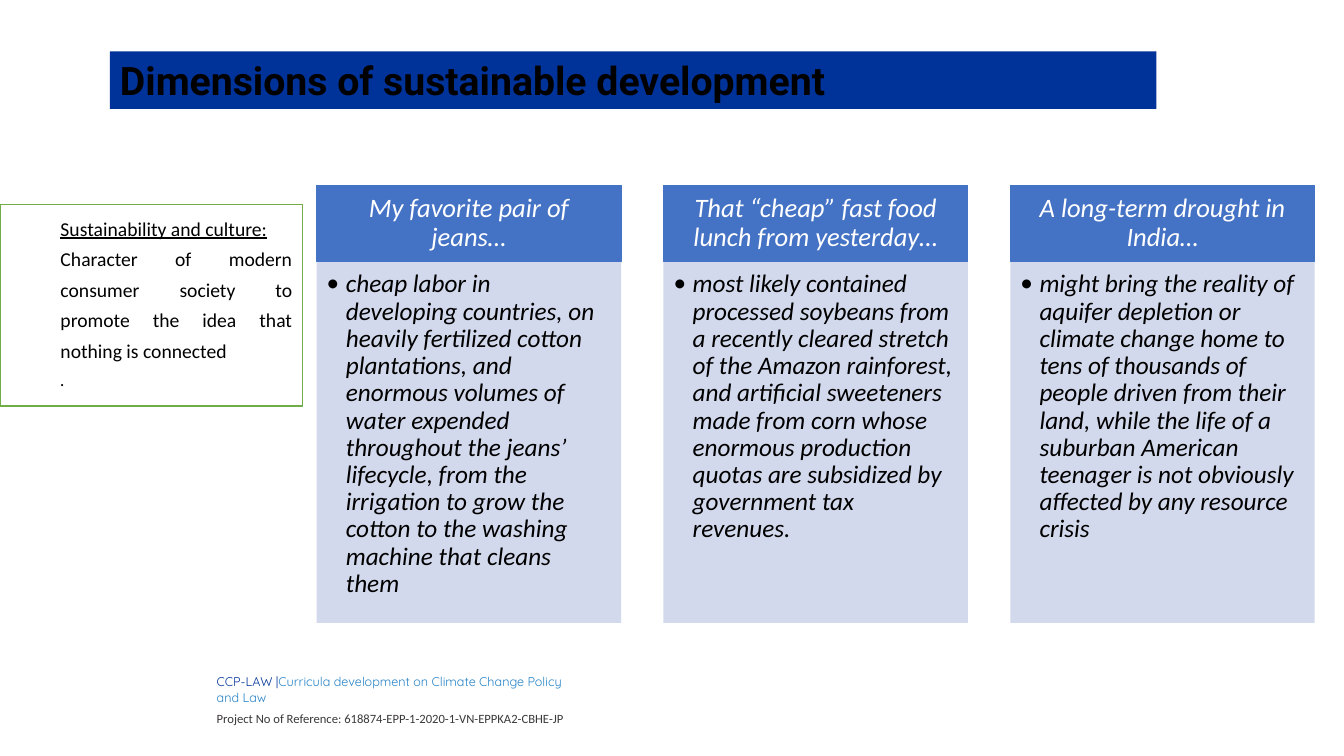
from dataclasses import dataclass

from lxml import etree
from pptx import Presentation
from pptx.dml.color import RGBColor
from pptx.enum.shapes import MSO_SHAPE
from pptx.enum.text import MSO_ANCHOR, MSO_AUTO_SIZE, PP_ALIGN
from pptx.oxml.ns import qn
from pptx.util import Inches, Pt

RECTANGLE = MSO_SHAPE.RECTANGLE
LEFT, CENTER, JUSTIFY = PP_ALIGN.LEFT, PP_ALIGN.CENTER, PP_ALIGN.JUSTIFY
TOP, MIDDLE = MSO_ANCHOR.TOP, MSO_ANCHOR.MIDDLE
NO_AUTOFIT = MSO_AUTO_SIZE.NONE
COMPARISON_LAYOUT = 4
CULTURE_PLACEHOLDER = 3


@dataclass(frozen=True)
class Theme:
    heading_font: str = "Roboto"
    body_font: str = "Calibri"
    footer_font: str = "Quicksand"
    navy: str = "003399"
    blue: str = "4472C4"
    pale_blue: str = "CFD5EA"
    sky: str = "2683C6"
    green: str = "70AD47"
    gray: str = "3B3838"
    black: str = "000000"
    white: str = "FFFFFF"
    title_size: float = 28
    header_size: float = 19
    list_size: float = 18
    culture_size: float = 14
    mark_size: float = 12.6
    footer_size: float = 9


THEME = Theme()


@dataclass(frozen=True)
class Box:
    left: float
    top: float
    width: float
    height: float

    def lengths(self) -> tuple:
        return tuple(Inches(value) for value in (self.left, self.top, self.width, self.height))


@dataclass(frozen=True)
class Run:
    text: str
    size: float
    color: str = THEME.black
    font: str = THEME.body_font
    bold: bool = False
    italic: bool = False
    underline: bool = False


@dataclass(frozen=True)
class Example:
    placeholder: int
    header: str
    detail: str


EXAMPLES = (
    Example(1, "My favorite pair of jeans…",
            "cheap labor in developing countries, on heavily fertilized cotton plantations, "
            "and enormous volumes of water expended throughout the jeans’ lifecycle, from the "
            "irrigation to grow the cotton to the washing machine that cleans them"),
    Example(2, "That “cheap” fast food lunch from yesterday…",
            "most likely contained processed soybeans from a recently cleared stretch of the "
            "Amazon rainforest, and artificial sweeteners made from corn whose enormous "
            "production quotas are subsidized by government tax revenues."),
    Example(4, "A long-term drought in India…",
            "might bring the reality of aquifer depletion or climate change home to tens of "
            "thousands of people driven from their land, while the life of a suburban American "
            "teenager is not obviously affected by any resource crisis"),
)
CULTURE_LINES = (
    (Run("Sustainability and culture:", THEME.culture_size, underline=True),),
    (Run("Character of modern consumer society to promote the idea that nothing is connected",
         THEME.culture_size),),
    (Run(".", THEME.mark_size, italic=True),),
)
FOOTER_LINES = (
    (Run("CCP-LAW |", THEME.footer_size, THEME.navy, THEME.footer_font),
     Run("Curricula development on Climate Change Policy and Law", THEME.footer_size,
         THEME.sky, THEME.footer_font)),
    (Run("Project No of Reference: 618874-EPP-1-2020-1-VN-EPPKA2-CBHE-JP",
         THEME.footer_size, THEME.gray),),
)
COLUMN_LEFT, COLUMN_STEP, COLUMN_WIDTH = 3.14, 3.44, 3.02
HEADER_TOP, HEADER_HEIGHT, LIST_HEIGHT = 1.84, 0.75, 3.59


def write_text(frame, lines: tuple, *, align=LEFT, spacing: float = 1.0,
               gap: float = 0, indent: float = 0, bullet: bool = False) -> None:
    for index, runs in enumerate(lines):
        paragraph = frame.paragraphs[0] if index == 0 else frame.add_paragraph()
        properties = paragraph._p.get_or_add_pPr()
        properties.set("marL", str(Inches(indent)))
        properties.set("indent", str(-Inches(indent) if bullet else 0))
        if bullet:
            bullet_color = etree.SubElement(properties, qn("a:buClr"))
            etree.SubElement(bullet_color, qn("a:srgbClr"), val=THEME.black)
            etree.SubElement(properties, qn("a:buFont"), typeface=THEME.body_font)
            etree.SubElement(properties, qn("a:buChar"), char="•")
        else:
            etree.SubElement(properties, qn("a:buNone"))
        paragraph.alignment = align
        paragraph.line_spacing = spacing
        paragraph.space_before = Pt(gap if index else 0)
        paragraph.space_after = Pt(0)
        for item in runs:
            run = paragraph.add_run()
            run.text = item.text
            run.font.name = item.font
            run.font.size = Pt(item.size)
            run.font.bold = item.bold
            run.font.italic = item.italic
            run.font.underline = item.underline
            run.font.color.rgb = RGBColor.from_string(item.color)


def set_margins(target, margins: tuple) -> None:
    (target.margin_left, target.margin_top,
     target.margin_right, target.margin_bottom) = (Inches(value) for value in margins)


def format_box(shape, box: Box, fill: str, *, line: str = "", line_width: float = 1,
               opacity: int = 100, margins: tuple = (0.1, 0.05, 0.1, 0.05), anchor=TOP):
    shape.left, shape.top, shape.width, shape.height = box.lengths()
    shape.fill.solid()
    shape.fill.fore_color.rgb = RGBColor.from_string(fill)
    if opacity < 100:
        color = shape._element.spPr.find(".//" + qn("a:srgbClr"))
        etree.SubElement(color, qn("a:alpha"), val=str(opacity * 1000))
    if line:
        shape.line.color.rgb = RGBColor.from_string(line)
        shape.line.width = Pt(line_width)
    else:
        shape.line.fill.background()
    frame = shape.text_frame
    frame.word_wrap = True
    frame.auto_size = NO_AUTOFIT
    frame.vertical_anchor = anchor
    set_margins(frame, margins)
    return frame


def add_example(slide, example: Example, left: float) -> None:
    header_box = Box(left, HEADER_TOP, COLUMN_WIDTH, HEADER_HEIGHT)
    header = slide.shapes.add_shape(RECTANGLE, *header_box.lengths())
    header.shadow.inherit = False
    frame = format_box(header, header_box, THEME.blue, line=THEME.blue, line_width=0.75,
                       margins=(0.15, 0.08, 0.15, 0.08), anchor=MIDDLE)
    header_run = Run(example.header, THEME.header_size, THEME.white, italic=True)
    write_text(frame, ((header_run,),), align=CENTER, spacing=0.9)

    list_box = Box(left, HEADER_TOP + HEADER_HEIGHT, COLUMN_WIDTH, LIST_HEIGHT)
    frame = format_box(slide.placeholders[example.placeholder], list_box, THEME.pale_blue,
                       opacity=90, margins=(0.1, 0.1, 0.14, 0.16))
    detail_run = Run(example.detail, THEME.list_size, italic=True)
    write_text(frame, ((detail_run,),), spacing=0.9, indent=0.19, bullet=True)


def add_footer(slide) -> None:
    table = slide.shapes.add_table(1, 2, *Box(1.3, 6.67, 4.52, 0.52).lengths()).table
    table.first_row = False
    table.horz_banding = False
    for column, width in zip(table.columns, (0.78, 3.74)):
        column.width = Inches(width)
    for cell in table.rows[0].cells:
        cell.fill.background()
        set_margins(cell, (0.07, 0, 0.07, 0))
        cell.vertical_anchor = MIDDLE
    write_text(table.cell(0, 1).text_frame, FOOTER_LINES, spacing=1.07, gap=3)


def main() -> None:
    presentation = Presentation()
    presentation.slide_width, presentation.slide_height = Inches(13.33), Inches(7.5)
    slide = presentation.slides.add_slide(presentation.slide_layouts[COMPARISON_LAYOUT])
    title_run = Run("Dimensions of sustainable development", THEME.title_size,
                    font=THEME.heading_font, bold=True)
    frame = format_box(slide.shapes.title, Box(1.09, 0.51, 10.38, 0.57), THEME.navy)
    write_text(frame, ((title_run,),))
    frame = format_box(slide.placeholders[CULTURE_PLACEHOLDER], Box(0, 2.03, 3, 2),
                       THEME.white, line=THEME.green)
    write_text(frame, CULTURE_LINES, align=JUSTIFY, spacing=1.3, indent=0.5)
    for index, example in enumerate(EXAMPLES):
        add_example(slide, example, COLUMN_LEFT + index * COLUMN_STEP)
    add_footer(slide)
    presentation.save("out.pptx")


if __name__ == "__main__":
    main()
